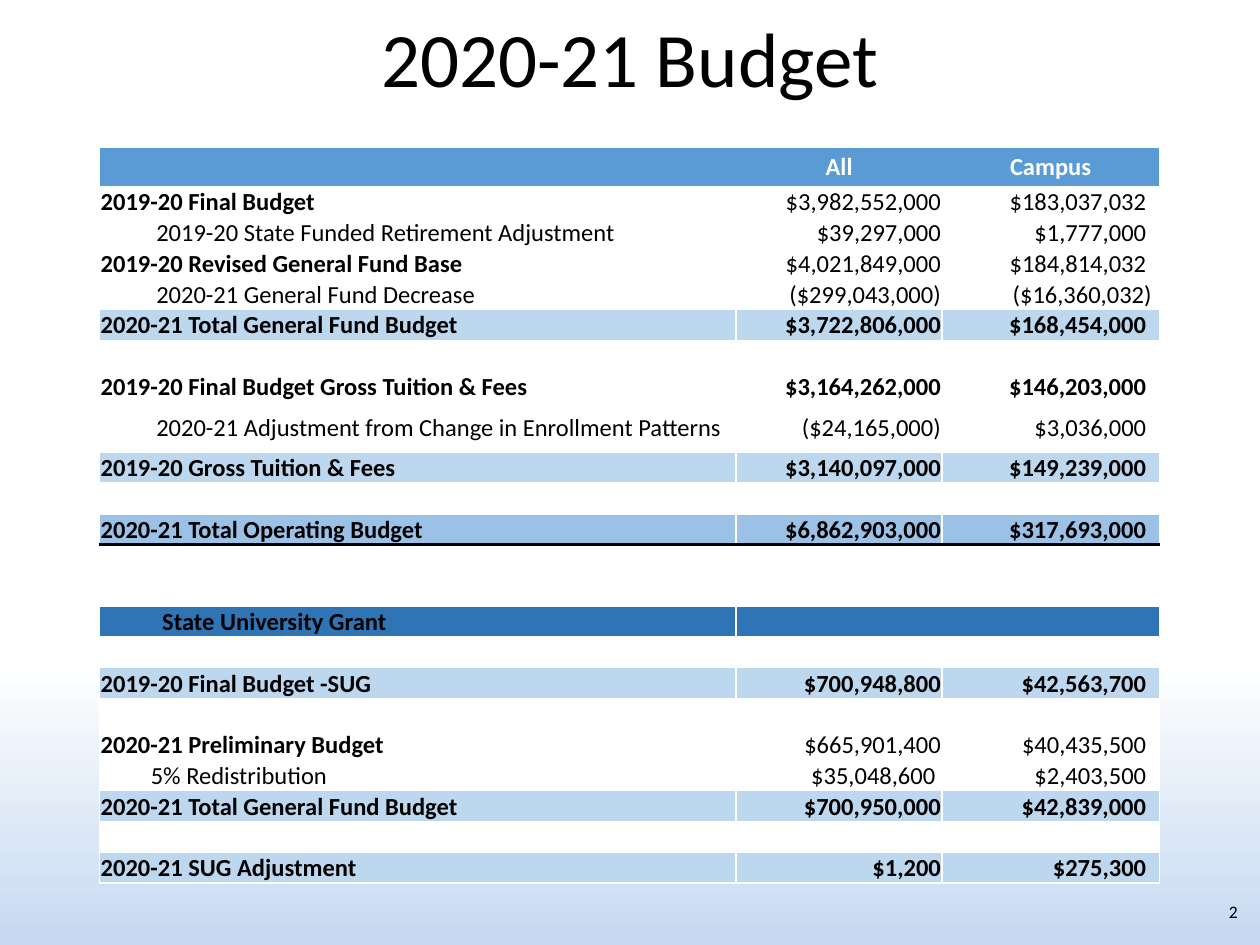
"""Build the 2020-21 budget slide with its funding table."""
import lxml.etree
import pptx
import pptx.dml.color
import pptx.enum.text
import pptx.oxml.ns
import pptx.util

Cm, Pt = pptx.util.Cm, pptx.util.Pt
RGB = pptx.dml.color.RGBColor.from_string
ALIGN, ANCHOR = pptx.enum.text.PP_ALIGN, pptx.enum.text.MSO_ANCHOR
qn = pptx.oxml.ns.qn

THEME = {
    "font": "Calibri", "title": 44, "body": 14, "number": 10,
    "black": "000000", "white": "FFFFFF", "page_end": "C6D9F1",
    "head": "5B9BD5", "total": "BDD7EE", "grand": "9BC2E6", "band": "2F75B5",
}
TITLE = "2020-21 Budget"
PAGE_NUMBER = "2"
BLANK = ("blank", "", "", "")
ROWS = [
    ("head", "", "All", "Campus"),
    ("base", "2019-20 Final Budget", "$3,982,552,000", "$183,037,032 "),
    ("item", "2019-20 State Funded Retirement Adjustment", "$39,297,000", "$1,777,000 "),
    ("base", "2019-20 Revised General Fund Base", "$4,021,849,000", "$184,814,032 "),
    ("item", "2020-21 General Fund Decrease", "($299,043,000)", "($16,360,032)"),
    ("total", "2020-21 Total General Fund Budget", "$3,722,806,000", "$168,454,000 "),
    BLANK,
    ("strong", "2019-20 Final Budget Gross Tuition & Fees", "$3,164,262,000", "$146,203,000 "),
    ("tall", "2020-21 Adjustment from Change in Enrollment Patterns", "($24,165,000)", "$3,036,000 "),
    ("total", "2019-20 Gross Tuition & Fees", "$3,140,097,000", "$149,239,000 "),
    BLANK,
    ("grand", "2020-21 Total Operating Budget", "$6,862,903,000", "$317,693,000 "),
    BLANK,
    BLANK,
    ("band", "State University Grant", "", ""),
    BLANK,
    ("total", "2019-20 Final Budget -SUG", "$700,948,800", "$42,563,700 "),
    BLANK,
    ("base", "2020-21 Preliminary Budget", "$665,901,400", "$40,435,500 "),
    ("share", "5% Redistribution", "$35,048,600 ", "$2,403,500 "),
    ("total", "2020-21 Total General Fund Budget", "$700,950,000", "$42,839,000 "),
    BLANK,
    ("total", "2020-21 SUG Adjustment", "$1,200", "$275,300 "),
]
COLUMNS = [12.83, 4.15, 4.38]
HEIGHTS = {"head": 0.79, "tall": 1.02}
ROW_HEIGHT = 0.62
INDENTS = {"item": 1.12, "tall": 1.12, "share": 1.01, "band": 1.24}
LIGHT_KINDS = ("item", "tall", "share")
UNDIVIDED = {"head": (0, 1), "band": (1,)}


def write(tf, text, size=THEME["body"], color=THEME["black"], bold=False, align=ALIGN.LEFT):
    """Put one formatted paragraph in a text frame."""
    p = tf.paragraphs[0]
    p.alignment = align
    if not text:
        lxml.etree.SubElement(p._p, qn("a:endParaRPr"), sz=str(size * 100))
        return
    r = p.add_run()
    r.text = text
    r.font.name, r.font.size, r.font.bold = THEME["font"], Pt(size), bold
    r.font.color.rgb = RGB(color)


def add_text(s, text, left, top, width, height, **fmt):
    """Add a wrapping text box."""
    tf = s.shapes.add_textbox(Cm(left), Cm(top), Cm(width), Cm(height)).text_frame
    tf.word_wrap = True
    write(tf, text, **fmt)


def set_borders(cell, borders):
    """Draw the given sides of a cell, each as (color, points) or None."""
    tc_pr = cell._tc.get_or_add_tcPr()
    for i, side in enumerate("LRTB"):
        line = lxml.etree.Element(qn(f"a:ln{side}"))
        if borders[side]:
            color, points = borders[side]
            line.set("w", str(Pt(points)))
            fill = lxml.etree.SubElement(line, qn("a:solidFill"))
            lxml.etree.SubElement(fill, qn("a:srgbClr"), val=color)
        else:
            lxml.etree.SubElement(line, qn("a:noFill"))
        tc_pr.insert(i, line)


def borders_for(row, col):
    """Return the borders of one table cell."""
    kind = ROWS[row][0]
    thin, rule = (THEME["white"], 1), (THEME["black"], 2)
    open_sides = UNDIVIDED.get(kind, ())
    return {
        "L": None if col - 1 in open_sides else thin,
        "R": None if col in open_sides else thin,
        "T": rule if row and ROWS[row - 1][0] == "grand" else thin,
        "B": rule if kind == "grand" else thin,
    }


def fill_cell(cell, row, col):
    """Format one table cell and write its text."""
    kind, text = ROWS[row][0], ROWS[row][col + 1]
    cell.vertical_anchor = ANCHOR.MIDDLE
    cell.margin_left = Cm(0.02 + (INDENTS.get(kind, 0) if col == 0 else 0))
    cell.margin_right = Cm(0.15 if col == 2 and kind != "head" else 0.02)
    cell.margin_top, cell.margin_bottom = Cm(0.02), 0
    cell.fill.solid()
    cell.fill.fore_color.rgb = RGB(THEME.get(kind, THEME["white"]))
    set_borders(cell, borders_for(row, col))
    value_align = ALIGN.CENTER if kind == "head" else ALIGN.RIGHT
    write(cell.text_frame, text,
          color=THEME["white" if kind == "head" else "black"],
          bold=kind not in LIGHT_KINDS and (col == 0 or kind != "base"),
          align=value_align if col else ALIGN.LEFT)


def add_budget_table(s, left, top):
    """Add the budget table."""
    heights = [HEIGHTS.get(row[0], ROW_HEIGHT) for row in ROWS]
    table = s.shapes.add_table(len(ROWS), len(COLUMNS), Cm(left), Cm(top),
                               Cm(sum(COLUMNS)), Cm(sum(heights))).table
    table.first_row = table.horz_banding = False
    for column, width in zip(table.columns, COLUMNS):
        column.width = Cm(width)
    for i, height in enumerate(heights):
        table.rows[i].height = Cm(height)
        for j in range(len(COLUMNS)):
            fill_cell(table.cell(i, j), i, j)


def main():
    """Build and save the slide."""
    prs = pptx.Presentation()
    prs.slide_width, prs.slide_height = Cm(25.4), Cm(19.05)
    s = prs.slides.add_slide(prs.slide_layouts[6])
    page = s.background.fill
    page.gradient()
    page.gradient_angle = 270
    stops = ((0.7, THEME["white"]), (1, THEME["page_end"]))
    for stop, (position, color) in zip(page.gradient_stops, stops):
        stop.position, stop.color.rgb = position, RGB(color)
    add_text(s, PAGE_NUMBER, 23.93, 18.03, 1.27, 1.02, size=THEME["number"], align=ALIGN.RIGHT)
    add_text(s, TITLE, 1.27, 0.08, 22.86, 3.18, size=THEME["title"], align=ALIGN.CENTER)
    add_budget_table(s, 2.01, 2.97)
    prs.save("out.pptx")


if __name__ == "__main__":
    main()
